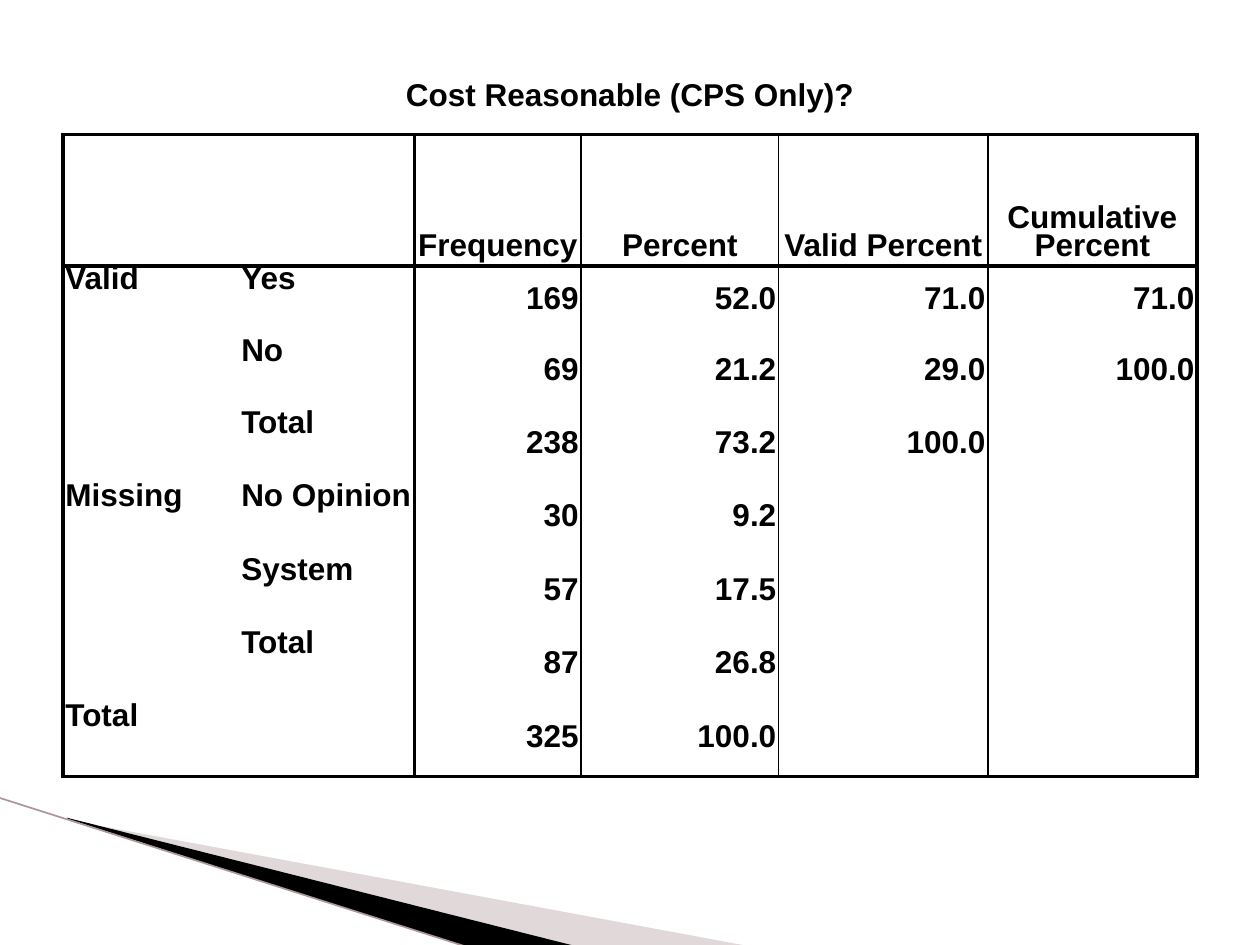
from dataclasses import dataclass
from itertools import accumulate

import lxml.etree
import pptx
import pptx.dml.color
import pptx.enum.text
import pptx.oxml
import pptx.oxml.ns
import pptx.slide
import pptx.table
import pptx.util

Pt = pptx.util.Pt
ALIGN = pptx.enum.text.PP_ALIGN
ANCHOR = pptx.enum.text.MSO_ANCHOR
NS = pptx.oxml.ns.nsdecls("a")
INK = "000000"
PAPER = "FFFFFF"
THICK, THIN, NONE = 2.25, 1, 0


@dataclass(frozen=True)
class Wedge:
    points: list[tuple[float, float]]
    color: str
    opacity: int = 100


@dataclass(frozen=True)
class CellStyle:
    align: ALIGN
    anchor: ANCHOR


TITLE = CellStyle(ALIGN.CENTER, ANCHOR.MIDDLE)
HEADER = CellStyle(ALIGN.CENTER, ANCHOR.BOTTOM)
LABEL = CellStyle(ALIGN.LEFT, ANCHOR.TOP)
NUMBER = CellStyle(ALIGN.RIGHT, ANCHOR.MIDDLE)

WEDGES = [
    Wedge([(39.6, 468.7), (428.4, 540.7), (328.3, 540.7), (39.6, 468)], "B4A0A1", 40),
    Wedge([(38.2, 467.3), (329, 540.7), (267.8, 541.4), (38.9, 468)], INK),
]
COLS = [100.5, 100.5, 95, 113, 119.5, 119.5]
ROWS = [41, 75, 41, 41] + [42] * 5
COL_EDGES = [THICK, NONE, THICK, THIN, THIN, THIN, THICK]
ROW_EDGES = [NONE, THICK, THICK] + [NONE] * 6 + [THICK]
MERGES = [((0, 0), (0, 5)), ((2, 0), (4, 0)), ((5, 0), (7, 0)), ((8, 0), (8, 1))]
DATA = [
    ["Cost Reasonable (CPS Only)?", "", "", "", "", ""],
    ["", "", "Frequency", "Percent", "Valid Percent", "Cumulative Percent"],
    ["Valid", "Yes", "169", "52.0", "71.0", "71.0"],
    ["", "No", "69", "21.2", "29.0", "100.0"],
    ["", "Total", "238", "73.2", "100.0", ""],
    ["Missing", "No Opinion", "30", "9.2", "", ""],
    ["", "System", "57", "17.5", "", ""],
    ["", "Total", "87", "26.8", "", ""],
    ["Total", "", "325", "100.0", "", ""],
]
FONT = {"name": "Arial", "size": Pt(18), "bold": True}
MARGINS = ("margin_left", "margin_top", "margin_right", "margin_bottom")


def rgb(color: str) -> pptx.dml.color.RGBColor:
    return pptx.dml.color.RGBColor.from_string(color)


def style_for(row: int, col: int) -> CellStyle:
    if row == 0:
        return TITLE
    if row == 1:
        return HEADER
    return LABEL if col < 2 else NUMBER


def draw_wedge(s: pptx.slide.Slide, wedge: Wedge) -> None:
    start, *rest = [(Pt(x), Pt(y)) for x, y in wedge.points]
    builder = s.shapes.build_freeform(*start)
    builder.add_line_segments(rest, close=True)
    sp = builder.convert_to_shape()
    sp.shadow.inherit = False
    sp.line.fill.background()
    sp.fill.solid()
    sp.fill.fore_color.rgb = rgb(wedge.color)
    if wedge.opacity < 100:
        clr = sp.fill._xPr.find(".//" + pptx.oxml.ns.qn("a:srgbClr"))
        alpha = lxml.etree.SubElement(clr, pptx.oxml.ns.qn("a:alpha"))
        alpha.set("val", str(wedge.opacity * 1000))


def draw_line(s: pptx.slide.Slide, ends: list[float], color: str, width: float) -> None:
    sp = s.shapes.add_connector(1, *map(Pt, ends))
    sp.line.color.rgb = rgb(color)
    sp.line.width = Pt(width)
    sp._element.spPr.append(pptx.oxml.parse_xml(f"<a:effectLst {NS}/>"))


def set_borders(cell: pptx.table._Cell, row: int, col: int) -> None:
    edges = {
        "lnL": COL_EDGES[col] if row else NONE,
        "lnR": COL_EDGES[col + 1] if row else NONE,
        "lnT": ROW_EDGES[row],
        "lnB": ROW_EDGES[row + 1],
    }
    tc_pr = cell._tc.get_or_add_tcPr()
    for tag, width in edges.items():
        fill = f'<a:solidFill><a:srgbClr val="{INK}"/></a:solidFill>' if width else "<a:noFill/>"
        xml = f'<a:{tag} {NS} w="{int(Pt(width))}">{fill}</a:{tag}>'
        tc_pr.append(pptx.oxml.parse_xml(xml))


def fill_cell(cell: pptx.table._Cell, text: str, style: CellStyle) -> None:
    cell.fill.solid()
    cell.fill.fore_color.rgb = rgb(PAPER)
    cell.vertical_anchor = style.anchor
    for margin in MARGINS:
        setattr(cell, margin, Pt(1.4))
    if not text:
        return
    p = cell.text_frame.paragraphs[0]
    p.alignment = style.align
    p.line_spacing = Pt(16)
    r = p.add_run()
    r.text = text
    for name, value in FONT.items():
        setattr(r.font, name, value)
    r.font.color.rgb = rgb(INK)


def draw_table(s: pptx.slide.Slide) -> None:
    *_, width = accumulate(COLS)
    *_, height = accumulate(ROWS)
    frame = s.shapes.add_table(len(ROWS), len(COLS), Pt(36), Pt(36), Pt(width), Pt(height))
    table = frame.table
    table.first_row = table.horz_banding = False
    for column, size in zip(table.columns, COLS):
        column.width = Pt(size)
    for line, size in zip(table.rows, ROWS):
        line.height = Pt(size)
    for start, end in MERGES:
        table.cell(*start).merge(table.cell(*end))
    for row, texts in enumerate(DATA):
        for col, text in enumerate(texts):
            cell = table.cell(row, col)
            set_borders(cell, row, col)
            fill_cell(cell, text, style_for(row, col))


def main() -> None:
    prs = pptx.Presentation()
    prs.slide_width, prs.slide_height = Pt(720), Pt(540)
    s = prs.slides.add_slide(prs.slide_layouts[6])
    for wedge in WEDGES:
        draw_wedge(s, wedge)
    draw_line(s, [-0.7, 455.8, 267.8, 541.4], "AC9697", 0.95)
    draw_table(s)
    prs.save("out.pptx")


if __name__ == "__main__":
    main()
